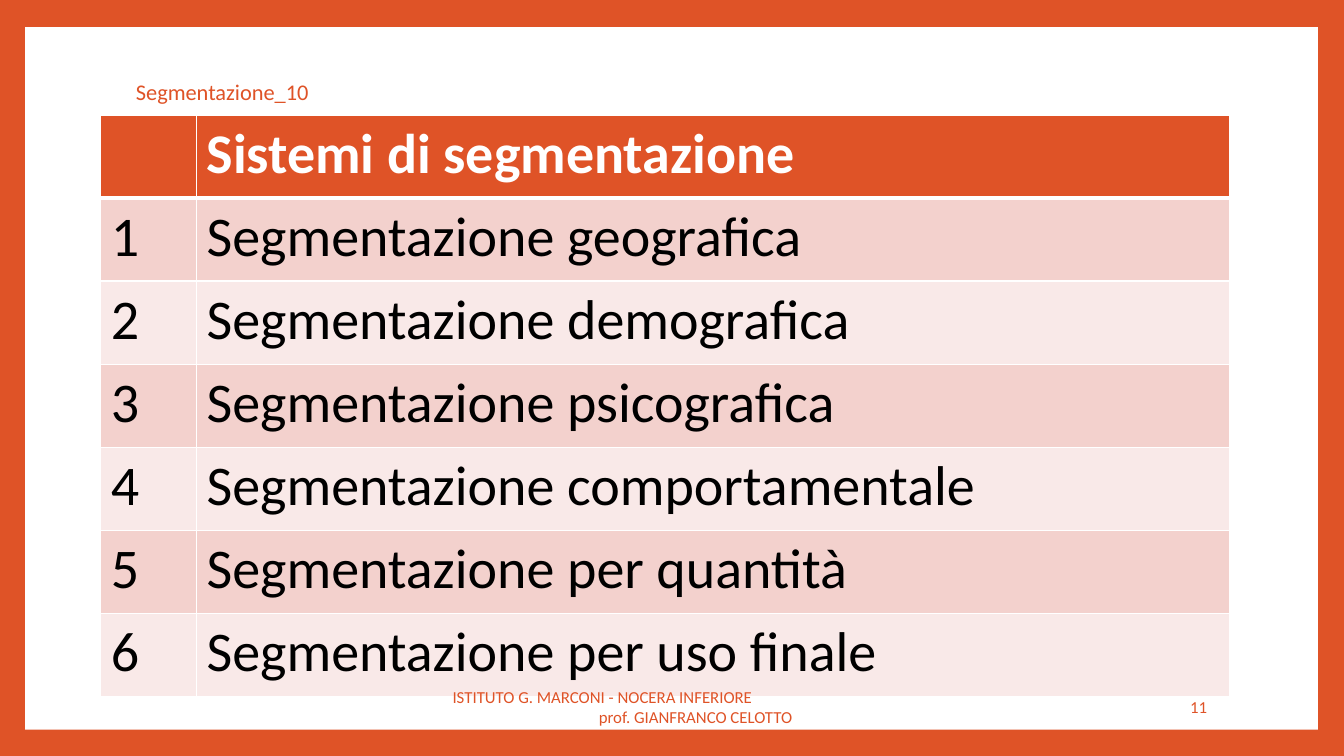
import pptx
import pptx.dml.color
import pptx.enum.shapes
import pptx.enum.text
import pptx.oxml
import pptx.oxml.ns
import pptx.util
from pptx.util import Inches

COLORS = {
    "orange": "DF5327",
    "white": "FFFFFF",
    "black": "000000",
    "dark_band": "F3D1CD",
    "light_band": "F9E9E8",
}
ALIGN = pptx.enum.text.PP_ALIGN
MIDDLE = pptx.enum.text.MSO_ANCHOR.MIDDLE


def rgb(name):
    return pptx.dml.color.RGBColor.from_string(COLORS[name])


def format_paragraph(paragraph, size, color, align=ALIGN.LEFT, bold=False):
    paragraph.alignment = align
    for run in paragraph.runs:
        run.font.name = "Calibri"
        run.font.size = pptx.util.Pt(size)
        run.font.bold = bold
        run.font.color.rgb = rgb(color)


presentation = pptx.Presentation()
presentation.slide_width = Inches(13.33)
presentation.slide_height = Inches(7.5)
slide = presentation.slides.add_slide(presentation.slide_layouts[6])
slide.background.fill.solid()
slide.background.fill.fore_color.rgb = rgb("orange")

panel = slide.shapes.add_shape(
    pptx.enum.shapes.MSO_SHAPE.RECTANGLE,
    Inches(0.25), Inches(0.27), Inches(12.82), Inches(6.97))
panel.shadow.inherit = False
panel.fill.solid()
panel.fill.fore_color.rgb = rgb("white")
panel.line.fill.background()

# Table of segmentation systems
systems = ["geografica", "demografica", "psicografica",
           "comportamentale", "per quantità", "per uso finale"]
rows = [("", "Sistemi di segmentazione")]
rows += [(str(number), f"Segmentazione {system}")
         for number, system in enumerate(systems, start=1)]

table = slide.shapes.add_table(
    len(rows), 2, Inches(1), Inches(1.14), Inches(11.2), Inches(5.77)).table
table.columns[0].width = Inches(0.95)
table.columns[1].width = Inches(10.25)

for row_index, texts in enumerate(rows):
    header = row_index == 0
    if header:
        fill = "orange"
    else:
        fill = "dark_band" if row_index % 2 else "light_band"
    border_widths = {"L": 1, "R": 1,
                     "T": 3 if row_index == 1 else 1,
                     "B": 3 if header else 1}
    for column_index, text in enumerate(texts):
        cell = table.cell(row_index, column_index)
        cell.text_frame.text = text
        format_paragraph(cell.text_frame.paragraphs[0], 40,
                         "white" if header else "black", bold=header)
        cell.fill.solid()
        cell.fill.fore_color.rgb = rgb(fill)
        properties = cell._tc.get_or_add_tcPr()
        for position, (side, width) in enumerate(border_widths.items()):
            properties.insert(position, pptx.oxml.parse_xml(
                f'<a:ln{side} {pptx.oxml.ns.nsdecls("a")} w="{pptx.util.Pt(width)}">'
                f'<a:solidFill><a:srgbClr val="{COLORS["white"]}"/></a:solidFill>'
                f'</a:ln{side}>'))

# Title, footer and slide number: box, size and aligned lines
labels = [
    ((1.25, 0.67, 10.8, 0.48), 16, [("Segmentazione_10", ALIGN.LEFT)]),
    ((4.32, 6.81, 5.16, 0.4), 12,
     [("ISTITUTO G. MARCONI - NOCERA INFERIORE", ALIGN.LEFT),
      ("prof. GIANFRANCO CELOTTO", ALIGN.CENTER)]),
    ((10.2, 6.81, 1.87, 0.4), 12, [("11", ALIGN.RIGHT)]),
]
for box, size, lines in labels:
    text_frame = slide.shapes.add_textbox(*map(Inches, box)).text_frame
    text_frame.word_wrap = True
    text_frame.vertical_anchor = MIDDLE
    text_frame.text = "\n".join(text for text, align in lines)
    for paragraph, (text, align) in zip(text_frame.paragraphs, lines):
        format_paragraph(paragraph, size, "orange", align)
        if len(lines) > 1 and align == ALIGN.LEFT:
            paragraph._p.get_or_add_pPr().set("marL", str(Inches(0.07)))

presentation.save("out.pptx")
